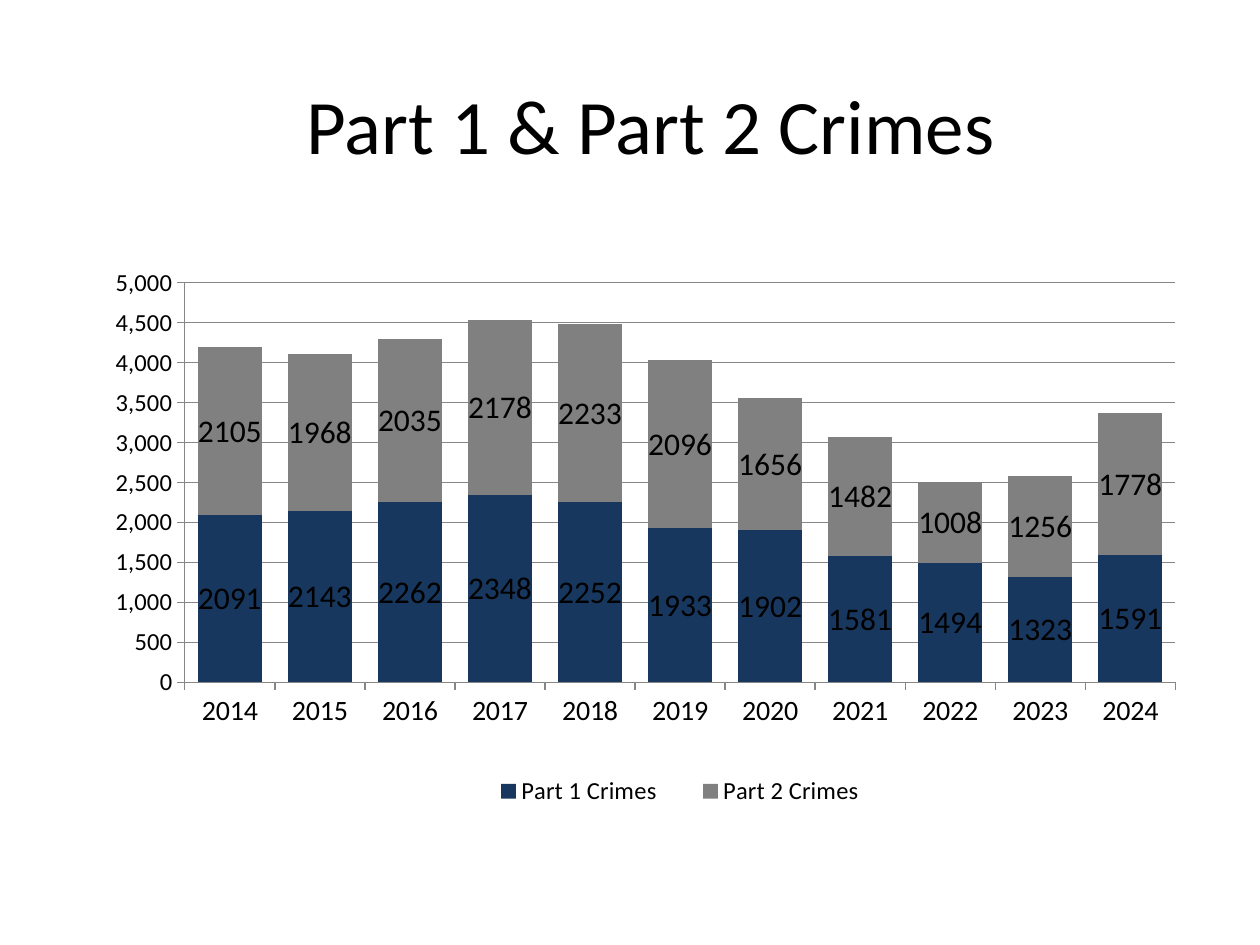
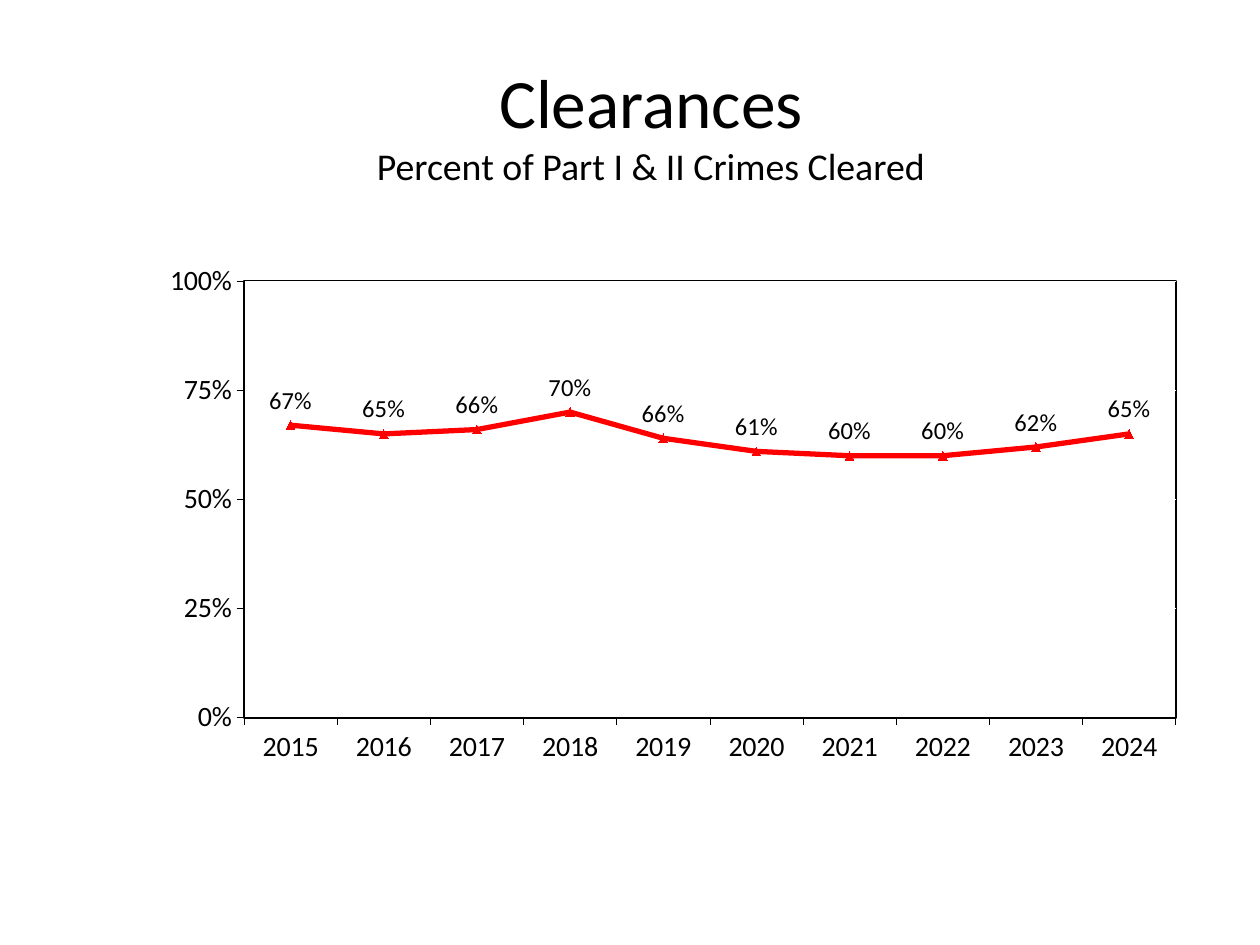
from lxml.etree import SubElement
from pptx import Presentation
from pptx.chart.data import CategoryChartData
from pptx.dml.color import RGBColor
from pptx.enum.chart import (XL_CHART_TYPE, XL_LABEL_POSITION, XL_LEGEND_POSITION,
                             XL_MARKER_STYLE, XL_TICK_MARK)
from pptx.enum.text import MSO_ANCHOR, PP_ALIGN
from pptx.oxml import parse_xml
from pptx.oxml.ns import nsdecls, qn
from pptx.util import Pt

FONT = "Calibri"
COLORS = {key: RGBColor.from_string(value) for key, value in {
    "text": "000000", "part_1": "17375E", "part_2": "808080",
    "grid": "868686", "clearance": "FF0000", "paper": "FFFFFF",
}.items()}


def place_inside_chart(part, position, bounds, target=None):
    for layout in part.findall(qn("c:layout")):
        part.remove(layout)
    layout = parse_xml(f"<c:layout {nsdecls('c')}><c:manualLayout/></c:layout>")
    manual = layout[0]
    settings = [("layoutTarget", target)] if target else []
    settings += [("xMode", "edge"), ("yMode", "edge"), *zip("xywh", bounds)]
    for name, value in settings:
        SubElement(manual, qn(f"c:{name}")).set("val", str(value))
    part.insert(position, layout)


def add_chart_slide(lines, chart_type, categories, series, number_format, box, plot_bounds):
    page = deck.slides.add_slide(deck.slide_layouts[5])
    title = page.shapes.title
    title.left, title.top, title.width, title.height = Pt(66), Pt(27), Pt(612), Pt(87)
    title.text_frame.vertical_anchor = MSO_ANCHOR.MIDDLE
    para = title.text_frame.paragraphs[0]
    para.alignment = PP_ALIGN.CENTER
    para.font.name = FONT
    para.font.color.rgb = COLORS["text"]
    for index, (text, size) in enumerate(lines):
        if index:
            para.add_line_break()
        span = para.add_run()
        span.text = text
        span.font.size = Pt(size)

    data = CategoryChartData(number_format=number_format)
    data.categories = categories
    for name, values in series:
        data.add_series(name, values)
    chart = page.shapes.add_chart(chart_type, *map(Pt, box), data).chart
    chart.has_title = False
    chart.has_legend = False
    chart.font.name = FONT
    chart.font.size = Pt(18)
    chart.font.color.rgb = COLORS["text"]
    for axis in (chart.category_axis, chart.value_axis):
        axis.major_tick_mark = XL_TICK_MARK.OUTSIDE
        axis.minor_tick_mark = XL_TICK_MARK.NONE
        axis.tick_labels.font.size = Pt(16)
    chart.value_axis.has_major_gridlines = True
    plot = chart.plots[0]
    plot.vary_by_categories = False
    plot.has_data_labels = True
    plot.data_labels.show_value = True
    place_inside_chart(chart.element.find(".//" + qn("c:plotArea")), 0, plot_bounds, "inner")
    return chart


deck = Presentation()
deck.slide_width, deck.slide_height = Pt(720), Pt(540)

crimes = add_chart_slide(
    [("Part 1 & Part 2 Crimes", 44)],
    XL_CHART_TYPE.COLUMN_STACKED,
    [str(year) for year in range(2014, 2025)],
    [("Part 1 Crimes", [2091, 2143, 2262, 2348, 2252, 1933, 1902, 1581, 1494, 1323, 1591]),
     ("Part 2 Crimes", [2105, 1968, 2035, 2178, 2233, 2096, 1656, 1482, 1008, 1256, 1778])],
    "General", (42, 138, 636, 336), (0.1, 0.07, 0.89, 0.68))
columns = crimes.plots[0]
columns.gap_width = 40
columns.overlap = 100
columns.data_labels.position = XL_LABEL_POSITION.CENTER
for column, key in zip(columns.series, ("part_1", "part_2")):
    column.format.fill.solid()
    column.format.fill.fore_color.rgb = COLORS[key]
count_axis = crimes.value_axis
count_axis.tick_labels.font.size = Pt(14)
count_axis.tick_labels.number_format = "#,##0"
count_axis.tick_labels.number_format_is_linked = False
for part in (count_axis, crimes.category_axis, count_axis.major_gridlines):
    part.format.line.color.rgb = COLORS["grid"]
    part.format.line.width = Pt(0.75)
crimes.has_legend = True
crimes.legend.position = XL_LEGEND_POSITION.BOTTOM
crimes.legend.include_in_layout = False
crimes.legend.font.size = Pt(14)
place_inside_chart(crimes.legend._element, 1, (0.35, 0.9, 0.39, 0.07))

clearances = add_chart_slide(
    [("Clearances", 39.6), ("Percent of Part I & II Crimes Cleared", 21.6)],
    XL_CHART_TYPE.LINE_MARKERS,
    [str(year) for year in range(2015, 2025)],
    [("Series 1", [0.67, 0.65, 0.66, 0.7, 0.64, 0.61, 0.6, 0.6, 0.62, 0.65])],
    "0%", (66, 138, 612, 324), (0.12, 0.07, 0.87, 0.77))
percent_axis = clearances.value_axis
percent_axis.minimum_scale, percent_axis.maximum_scale = 0, 1
percent_axis.major_unit = 0.25
percent_axis.tick_labels.number_format = "0%"
percent_axis.tick_labels.number_format_is_linked = False
for part, key in ((percent_axis, "text"), (clearances.category_axis, "text"),
                  (percent_axis.major_gridlines, "paper")):
    part.format.line.color.rgb = COLORS[key]
    part.format.line.width = Pt(0.25)
clearances.element.find(".//" + qn("c:plotArea")).append(parse_xml(
    f'<c:spPr {nsdecls("c", "a")}><a:noFill/><a:ln w="{Pt(1)}"><a:solidFill>'
    f'<a:srgbClr val="{COLORS["text"]}"/></a:solidFill></a:ln></c:spPr>'))

rate = clearances.plots[0].series[0]
rate.smooth = False
rate.format.line.color.rgb = COLORS["clearance"]
rate.format.line.width = Pt(3)
rate.marker.style = XL_MARKER_STYLE.TRIANGLE
rate.marker.size = 5
rate.marker.format.fill.solid()
rate.marker.format.fill.fore_color.rgb = COLORS["clearance"]
rate.marker.format.line.color.rgb = COLORS["clearance"]
labels = rate.data_labels
labels.show_value = True
labels.position = XL_LABEL_POSITION.ABOVE
labels.number_format = "0%"
labels.number_format_is_linked = False
labels.font.size = Pt(14)
label_2019 = rate.points[4].data_label
label_2019.position = XL_LABEL_POSITION.ABOVE
para = label_2019.text_frame.paragraphs[0]
span = para.add_run()
span.text = "66%"
span.font.size = Pt(14)
span.font.name = FONT

deck.save("out.pptx")
